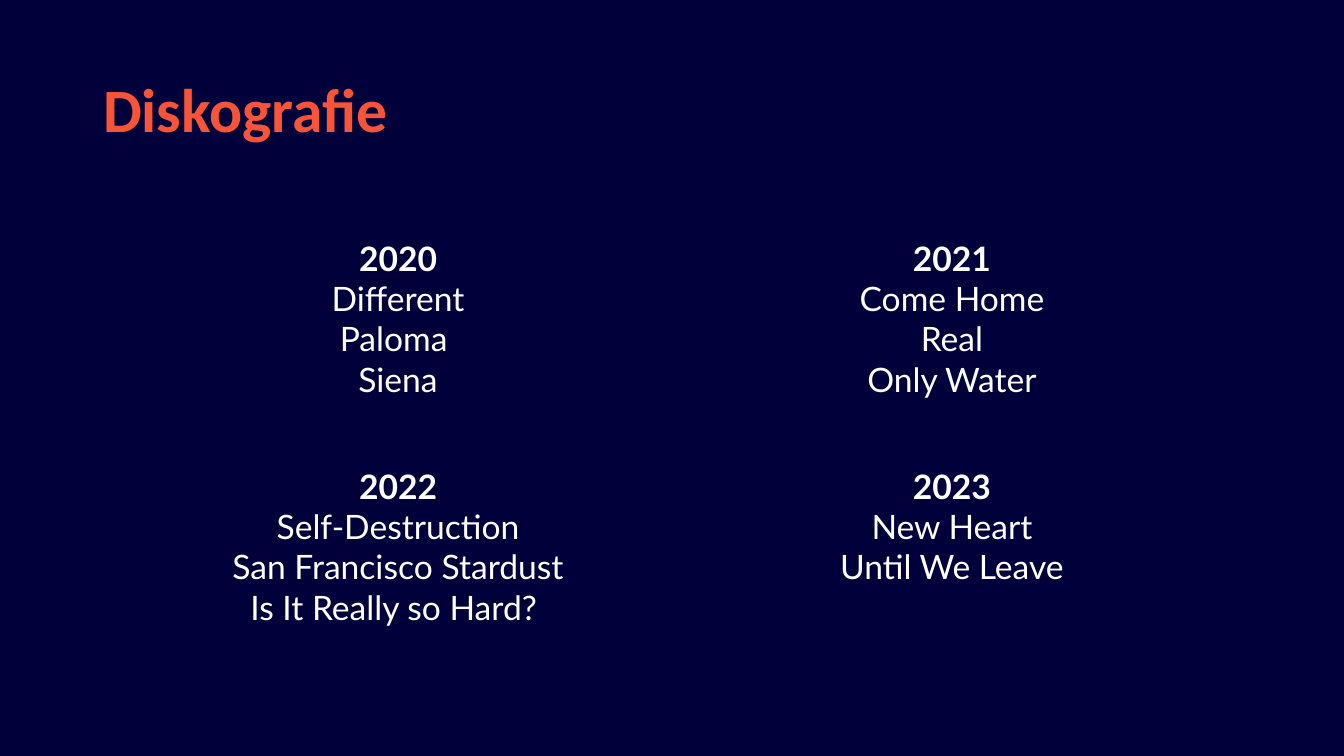
from dataclasses import dataclass

from pptx import Presentation
from pptx.dml.color import RGBColor
from pptx.enum.text import MSO_ANCHOR as Anchor, PP_ALIGN as Align
from pptx.util import Emu, Pt


@dataclass(frozen=True)
class Theme:
    background: str = "00003B"
    accent: str = "F95437"
    text: str = "FFFFFF"
    title_font: str = "Calibri"
    body_font: str = "Lato"
    title_size: int = 44
    body_size: int = 24


THEME = Theme()
SLIDE_WIDTH, SLIDE_HEIGHT = 1344, 756
EMU_PER_PX = 12192000 / SLIDE_WIDTH
NO_STYLE_NO_GRID = "{2D5ABB26-0587-4C30-8999-92F81FD0307C}"


def px(length):
    return Emu(round(length * EMU_PER_PX))


def write(paragraph, text, *, font, size, color, bold=False, align=Align.LEFT):
    paragraph.alignment = align
    run = paragraph.add_run()
    run.text = text
    run.font.name = font
    run.font.size = Pt(size)
    run.font.bold = bold
    run.font.color.rgb = RGBColor.from_string(color)


presentation = Presentation()
presentation.slide_width = px(SLIDE_WIDTH)
presentation.slide_height = px(SLIDE_HEIGHT)
slide = presentation.slides.add_slide(presentation.slide_layouts[5])
slide.background.fill.solid()
slide.background.fill.fore_color.rgb = RGBColor.from_string(THEME.background)

title = slide.shapes.title
title.left, title.top, title.width, title.height = map(px, (93, 40, 1159, 146))
title.text_frame.vertical_anchor = Anchor.MIDDLE
title_paragraph = title.text_frame.paragraphs[0]
title_paragraph.line_spacing = 0.9
write(title_paragraph, "Diskografie", font=THEME.title_font,
      size=THEME.title_size, color=THEME.accent, bold=True)

releases = [
    [("2020", "Different", "Paloma ", "Siena"),
     ("2021", "Come Home", "Real", "Only Water")],
    [("2022", "Self-Destruction", "San Francisco Stardust", "Is It Really so Hard? "),
     ("2023", "New Heart", "Until We Leave")],
]
row_heights = (228, 190)

table = slide.shapes.add_table(2, 2, px(121), px(233), px(1108), px(sum(row_heights))).table
table.first_row = False
table.horz_banding = False
table._tbl.tblPr.find("{*}tableStyleId").text = NO_STYLE_NO_GRID

for row, height, years in zip(table.rows, row_heights, releases):
    row.height = px(height)
    for cell, lines in zip(row.cells, years):
        cell.fill.solid()
        cell.fill.fore_color.rgb = RGBColor.from_string(THEME.background)
        for index, line in enumerate(lines):
            frame = cell.text_frame
            paragraph = frame.add_paragraph() if index else frame.paragraphs[0]
            write(paragraph, line, font=THEME.body_font, size=THEME.body_size,
                  color=THEME.text, bold=index == 0, align=Align.CENTER)

presentation.save("out.pptx")
